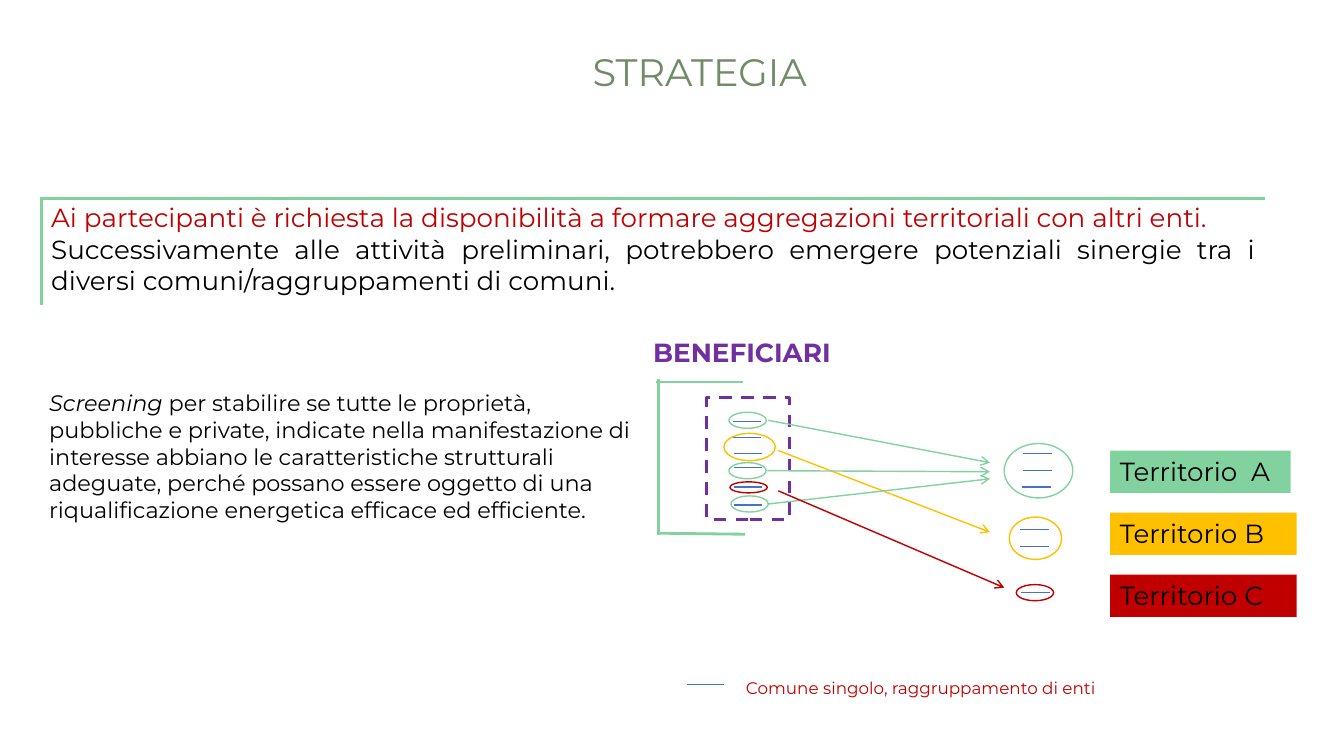
from lxml import etree
from pptx import Presentation
from pptx.dml.color import RGBColor
from pptx.enum.dml import MSO_LINE
from pptx.enum.shapes import MSO_CONNECTOR, MSO_SHAPE
from pptx.enum.text import MSO_ANCHOR, PP_ALIGN
from pptx.oxml.ns import qn
from pptx.util import Inches, Pt

STRAIGHT = MSO_CONNECTOR.STRAIGHT
RECTANGLE, OVAL = MSO_SHAPE.RECTANGLE, MSO_SHAPE.OVAL
LEFT, CENTER, JUSTIFY = PP_ALIGN.LEFT, PP_ALIGN.CENTER, PP_ALIGN.JUSTIFY
TOP, DASH = MSO_ANCHOR.TOP, MSO_LINE.DASH
FONT = "Montserrat"
GREEN, YELLOW, RED = "82D2A0", "FFC000", "C00000"
BLUE, PURPLE, OLIVE, BLACK = "4472C4", "7030A0", "708C67", "000000"
MUNICIPALITY_WIDTH = 0.28


def color(hex_string):
    return RGBColor.from_string(hex_string)


def write(frame, paragraphs, size, align=LEFT, spacing=None):
    frame.word_wrap = True
    frame.vertical_anchor = TOP
    for index, runs in enumerate(paragraphs):
        paragraph = frame.paragraphs[0] if index == 0 else frame.add_paragraph()
        paragraph.alignment = align
        paragraph.line_spacing = spacing
        for text, hex_string, extra in runs:
            run = paragraph.add_run()
            run.text = text
            formats = {"name": FONT, "size": Pt(size), **extra}
            for attribute, value in formats.items():
                setattr(run.font, attribute, value)
            run.font.color.rgb = color(hex_string)


def add_text(slide, box, paragraphs, size, align=LEFT, spacing=None):
    area = slide.shapes.add_textbox(*map(Inches, box))
    write(area.text_frame, paragraphs, size, align, spacing)


def add_line(slide, start, end, hex_string, width=1, arrow=False):
    line = slide.shapes.add_connector(STRAIGHT, *map(Inches, (*start, *end)))
    line.line.color.rgb = color(hex_string)
    line.line.width = Pt(width)
    if arrow:
        etree.SubElement(line.line._get_or_add_ln(), qn("a:tailEnd"), type="arrow")
    etree.SubElement(line._element.spPr, qn("a:effectLst"))


def add_outline(slide, kind, box, hex_string, width=1, dash=None):
    outline = slide.shapes.add_shape(kind, *map(Inches, box))
    outline.shadow.inherit = False
    outline.fill.background()
    outline.line.color.rgb = color(hex_string)
    outline.line.width = Pt(width)
    if dash:
        outline.line.dash_style = dash


def add_municipality(slide, left, top):
    add_line(slide, (left, top), (left + MUNICIPALITY_WIDTH, top), BLUE)


def draw_title(slide, box):
    add_text(slide, box, [[("STRATEGIA", OLIVE, {})]], 27.3, CENTER, 0.9)


def draw_request(slide, box):
    left, top, width, height = box
    add_text(slide, box, [
        [("Ai partecipanti è richiesta la disponibilità a formare aggregazioni "
          "territoriali con altri enti.", RED, {})],
        [("Successivamente alle attività preliminari, potrebbero emergere potenziali "
          "sinergie tra i diversi comuni/raggruppamenti di comuni.", BLACK, {})],
    ], 18.7, JUSTIFY)
    add_line(slide, (left + width, top + 0.02), (left, top + 0.02), GREEN, 2)
    add_line(slide, (left, top), (left, top + height + 0.04), GREEN, 2)


def draw_screening(slide, box):
    add_text(slide, box, [[
        ("Screening", BLACK, {"italic": True}),
        (" per stabilire se tutte le proprietà, pubbliche e private, indicate nella "
         "manifestazione di interesse abbiano le caratteristiche strutturali adeguate, "
         "perché possano essere oggetto di una riqualificazione energetica efficace ed "
         "efficiente.", BLACK, {"italic": False}),
    ]], 16)


def draw_beneficiaries(slide, box):
    left, top, width, height = box
    add_text(slide, (left - 0.63, top - 0.65, 1.99, 0.42),
             [[("BENEFICIARI", PURPLE, {"bold": True})]], 18.7)
    bracket, upper, lower = left - 0.48, top - 0.15, top + 1.35
    add_line(slide, (bracket, upper - 0.03), (bracket, lower + 0.02), GREEN, 2)
    add_line(slide, (bracket + 0.84, upper), (bracket - 0.02, upper), GREEN, 2)
    add_line(slide, (bracket + 0.86, lower + 0.01), (bracket, lower), GREEN, 2)
    for x, y in ((0.26, 0.24), (0.26, 0.4), (0.27, 0.56),
                 (0.27, 0.7), (0.27, 0.89), (0.27, 1.07)):
        add_municipality(slide, left + x, top + y)
    for x, y, oval_width, oval_height, hex_string in (
            (0.17, 0.36, 0.51, 0.27, YELLOW), (0.22, 0.15, 0.37, 0.16, GREEN),
            (0.24, 0.98, 0.37, 0.16, GREEN), (0.22, 0.65, 0.37, 0.16, GREEN),
            (0.23, 0.84, 0.37, 0.11, RED)):
        add_outline(slide, OVAL, (left + x, top + y, oval_width, oval_height), hex_string)
    add_outline(slide, RECTANGLE, box, PURPLE, 2.25, DASH)


def draw_aggregation(slide, box):
    left, top, width, height = box
    for start_x, start_y, end_x, end_y, hex_string in (
            (0.11, 0.3, 2.21, 1.11, YELLOW), (0.01, 0, 2.21, 0.42, GREEN),
            (0, 0.5, 2.21, 0.51, GREEN), (0.01, 0.83, 2.21, 0.58, GREEN),
            (0.11, 0.7, width, height, RED)):
        add_line(slide, (left + start_x, top + start_y), (left + end_x, top + end_y),
                 hex_string, arrow=True)


def draw_territory(slide, box, hex_string, municipalities, label, label_box):
    left, top, width, height = box
    for x, y in municipalities:
        add_municipality(slide, left + x, top + y)
    add_outline(slide, OVAL, box, hex_string)
    plate = slide.shapes.add_shape(RECTANGLE, *map(Inches, label_box))
    plate.shadow.inherit = False
    plate.fill.solid()
    plate.fill.fore_color.rgb = color(hex_string)
    plate.line.fill.background()
    write(plate.text_frame, [[(label, BLACK, {})]], 18.7)


def draw_legend(slide, box):
    left, top, width, height = box
    add_line(slide, (left, top + 0.12), (left + 0.37, top + 0.12), BLUE)
    add_text(slide, (left + 0.49, top, width - 0.49, height),
             [[("Comune singolo, raggruppamento di enti", RED, {})]], 12)


def main():
    deck = Presentation()
    deck.slide_width, deck.slide_height = Inches(13.33), Inches(7.5)
    slide = deck.slides.add_slide(deck.slide_layouts[6])
    draw_title(slide, (1.93, 0.48, 10.02, 0.89))
    draw_request(slide, (0.41, 1.95, 12.14, 1.04))
    draw_screening(slide, (0.39, 3.81, 6.1, 1.45))
    draw_beneficiaries(slide, (7.01, 3.94, 0.82, 1.21))
    draw_aggregation(slide, (7.61, 4.17, 2.35, 1.66))
    territories = (
        ((9.96, 4.4, 0.68, 0.54), GREEN, ((0.19, 0.1), (0.19, 0.27), (0.18, 0.43)),
         "Territorio  A", 1.79),
        ((10.01, 5.13, 0.52, 0.42), YELLOW, ((0.11, 0.12), (0.11, 0.29)),
         "Territorio B", 1.85),
        ((10.08, 5.8, 0.37, 0.16), RED, ((0.05, 0.08),), "Territorio C", 1.85),
    )
    for row, (box, hex_string, municipalities, label, width) in enumerate(territories):
        draw_territory(slide, box, hex_string, municipalities, label,
                       (11.01, 4.47 + row * 0.615, width, 0.42))
    draw_legend(slide, (6.81, 6.67, 5.52, 0.3))
    deck.save("out.pptx")


if __name__ == "__main__":
    main()
